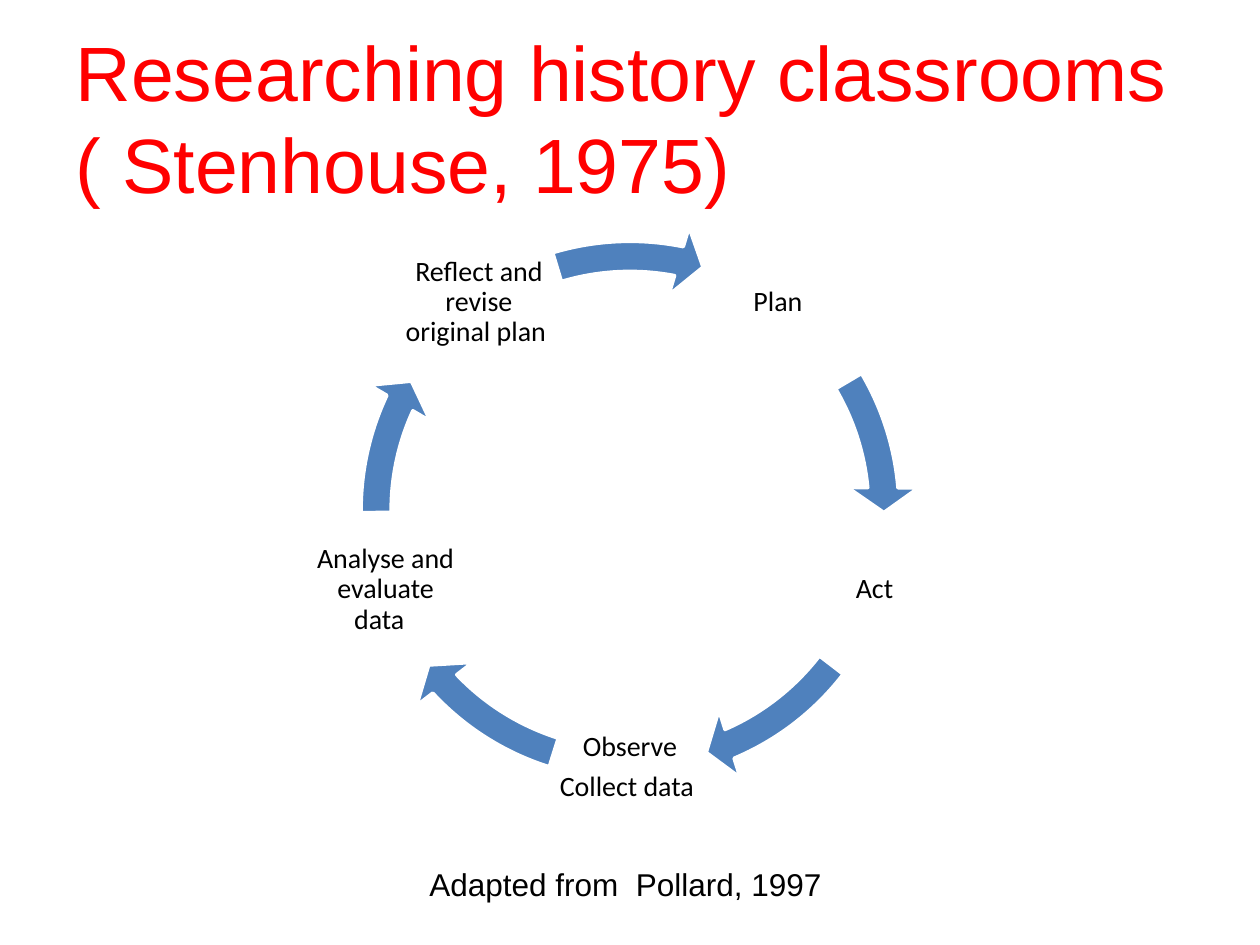
from math import cos, radians, sin

from pptx import Presentation
from pptx.dml.color import RGBColor
from pptx.enum.shapes import MSO_SHAPE
from pptx.enum.text import MSO_ANCHOR, PP_ALIGN
from pptx.util import Inches, Pt

RED = RGBColor(0xFF, 0x00, 0x00)
BLACK = RGBColor(0x00, 0x00, 0x00)
WHITE = RGBColor(0xFF, 0xFF, 0xFF)
BLUE = RGBColor(0x4F, 0x81, 0xBD)

# Cycle geometry, in inches and degrees
CENTRE_X, CENTRE_Y = 5, 4.05
STAGE_RADIUS, STAGE_SIZE = 2.04, 1.22
RING_SIZE = 4.59
FIRST_ANGLE = -54

# Stage lines, with the end and start angle of the arrow that follows
CYCLE = [
    (["Plan "], 354.9, 329.42),
    (["Act"], 66.92, 37.55),
    (["Observe", "Collect data "], 136.86, 107.48),
    (["Analyse and evaluate data  "], 204.98, 179.5),
    (["Reflect and revise original plan "], 281.11, 253.3),
]


class CycleSlide:
    def __init__(self, presentation):
        self.slide = presentation.slides.add_slide(presentation.slide_layouts[5])

    def add_run(self, paragraph, text, font_name, size, color):
        run = paragraph.add_run()
        run.text = text
        run.font.name = font_name
        run.font.size = Pt(size)
        run.font.color.rgb = color

    def title(self, lines, left, top, width, height):
        title = self.slide.shapes.title
        title.left, title.top = Inches(left), Inches(top)
        title.width, title.height = Inches(width), Inches(height)
        title.text_frame.vertical_anchor = MSO_ANCHOR.MIDDLE
        paragraph = title.text_frame.paragraphs[0]
        paragraph.alignment = PP_ALIGN.LEFT
        for index, line in enumerate(lines):
            if index:
                paragraph.add_line_break()
            self.add_run(paragraph, line, "Arial", 44, RED)

    def text_box(self, left, top, width, height):
        box = self.slide.shapes.add_textbox(
            Inches(left), Inches(top), Inches(width), Inches(height))
        box.text_frame.word_wrap = True
        return box.text_frame

    def stage(self, lines, angle):
        left = CENTRE_X + STAGE_RADIUS * cos(radians(angle)) - STAGE_SIZE / 2
        top = CENTRE_Y + STAGE_RADIUS * sin(radians(angle)) - STAGE_SIZE / 2
        frame = self.text_box(left, top, STAGE_SIZE, STAGE_SIZE)
        frame.vertical_anchor = MSO_ANCHOR.MIDDLE
        frame.margin_left = frame.margin_right = Inches(0.02)
        frame.margin_top = frame.margin_bottom = Inches(0.02)
        for index, line in enumerate(lines):
            paragraph = frame.add_paragraph() if index else frame.paragraphs[0]
            paragraph.alignment = PP_ALIGN.CENTER
            paragraph.line_spacing = 0.9
            paragraph.space_after = Pt(5.6)
            self.add_run(paragraph, line, "Calibri", 16, BLACK)

    def arrow(self, end_angle, start_angle):
        arrow = self.slide.shapes.add_shape(
            MSO_SHAPE.CIRCULAR_ARROW,
            Inches(CENTRE_X - RING_SIZE / 2), Inches(CENTRE_Y - RING_SIZE / 2),
            Inches(RING_SIZE), Inches(RING_SIZE))
        # Angles are stored in 60000ths of a degree, adjustments in 100000ths
        settings = [0.052, 5.6 * 0.6, end_angle * 0.6, start_angle * 0.6, 0.061]
        for index, value in enumerate(settings):
            arrow.adjustments[index] = value
        arrow.shadow.inherit = False
        arrow.fill.solid()
        arrow.fill.fore_color.rgb = BLUE
        arrow.line.color.rgb = WHITE
        arrow.line.width = Pt(2)

    def credit(self, text, left, top, width, height):
        frame = self.text_box(left, top, width, height)
        self.add_run(frame.paragraphs[0], text, "Arial", 18, BLACK)


def main():
    presentation = Presentation()
    presentation.slide_width = Inches(10)
    presentation.slide_height = Inches(7.5)
    page = CycleSlide(presentation)

    # Title
    page.title(["Researching history classrooms", "( Stenhouse, 1975)"],
               0.5, 0.3, 9, 1.25)

    # Research cycle: stages evenly spaced on a circle, joined by arrows
    for index, (lines, end_angle, start_angle) in enumerate(CYCLE):
        page.stage(lines, FIRST_ANGLE + index * 360 / len(CYCLE))
        page.arrow(end_angle, start_angle)

    # Source credit
    page.credit("Adapted from  Pollard, 1997", 3.31, 6.82, 5.63, 0.4)

    presentation.save("out.pptx")


if __name__ == "__main__":
    main()
